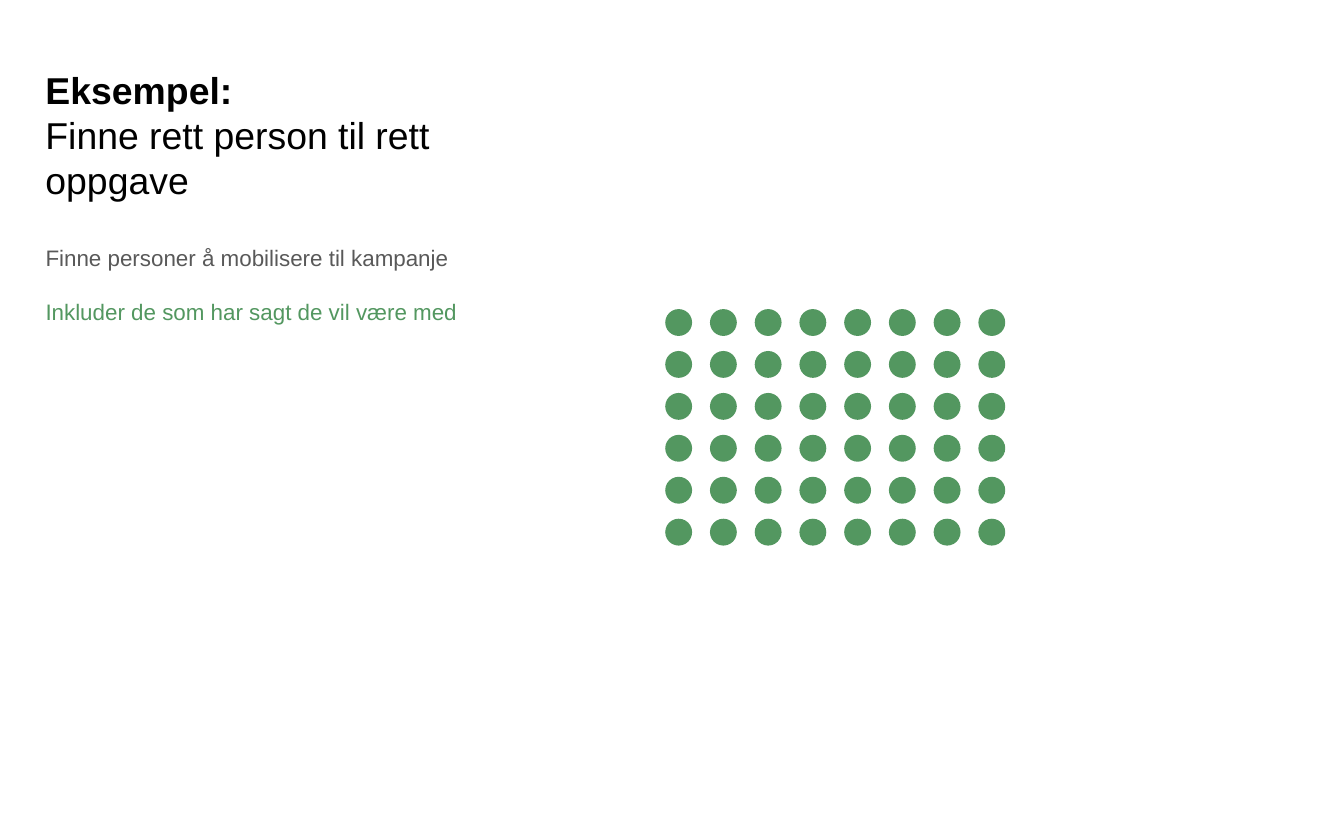
from itertools import product

from pptx import Presentation
from pptx.dml.color import RGBColor
from pptx.enum.shapes import MSO_SHAPE
from pptx.enum.text import MSO_ANCHOR
from pptx.util import Inches, Pt

OVAL = MSO_SHAPE.OVAL
TOP, BOTTOM = MSO_ANCHOR.TOP, MSO_ANCHOR.BOTTOM

THEME = {
    "font": "Arial",
    "black": RGBColor.from_string("000000"),
    "grey": RGBColor.from_string("595959"),
    "green": RGBColor.from_string("539760"),
    "title_size": 20,
    "body_size": 12,
}

# Content: paragraphs of (text, colour, bold) spans; "\n" is a line break
TITLE = [[("Eksempel:\n", "black", True),
          ("Finne rett person til rett oppgave", "black", False)]]
BODY = [[("Finne personer å mobilisere til kampanje", "grey", False)],
        [("Inkluder de som har sagt de vil være med", "green", False)]]

# Layout in inches
SLIDE_WIDTH, SLIDE_HEIGHT = 10, 6.25
TITLE_AREA = (0.24, 0.68, 3.07, 0.92)
BODY_AREA = (0.24, 1.69, 3.75, 3.56)
MARGIN = 0.1
ROWS, COLUMNS = 6, 8
DOT_SIZE = 0.2
GRID_LEFT, GRID_TOP = 4.95, 2.3
GRID_WIDTH, GRID_HEIGHT = 2.33, 1.56  # first to last dot


def add_text(page, area, paragraphs, *, size, anchor=TOP, line_spacing=None, space_after=0):
    box = page.shapes.add_textbox(*map(Inches, area))
    frame = box.text_frame
    frame.word_wrap = True
    frame.vertical_anchor = anchor
    frame.margin_left = frame.margin_right = Inches(MARGIN)
    frame.margin_top = frame.margin_bottom = Inches(MARGIN)
    for index, spans in enumerate(paragraphs):
        para = frame.add_paragraph() if index else frame.paragraphs[0]
        para.line_spacing = line_spacing
        para.space_after = Pt(space_after)
        para.font.size = Pt(size)
        for text, colour, bold in spans:
            span = para.add_run()
            span.text = text.rstrip("\n")
            span.font.name = THEME["font"]
            span.font.size = Pt(size)
            span.font.bold = bold
            span.font.color.rgb = THEME[colour]
            if text.endswith("\n"):
                para.add_line_break()


def add_dot(page, row, column):
    left = GRID_LEFT + column * GRID_WIDTH / (COLUMNS - 1)
    top = GRID_TOP + row * GRID_HEIGHT / (ROWS - 1)
    dot = page.shapes.add_shape(OVAL, *map(Inches, (left, top, DOT_SIZE, DOT_SIZE)))
    dot.shadow.inherit = False
    dot.fill.solid()
    dot.fill.fore_color.rgb = THEME["green"]
    dot.line.fill.background()


def main():
    deck = Presentation()
    deck.slide_width, deck.slide_height = Inches(SLIDE_WIDTH), Inches(SLIDE_HEIGHT)
    page = deck.slides.add_slide(deck.slide_layouts[6])

    # Text column
    add_text(page, BODY_AREA, BODY, size=THEME["body_size"], line_spacing=1.15, space_after=12)
    add_text(page, TITLE_AREA, TITLE, size=THEME["title_size"], anchor=BOTTOM)

    # Grid of people
    for row, column in product(range(ROWS), range(COLUMNS)):
        add_dot(page, row, column)

    deck.save("out.pptx")


if __name__ == "__main__":
    main()
